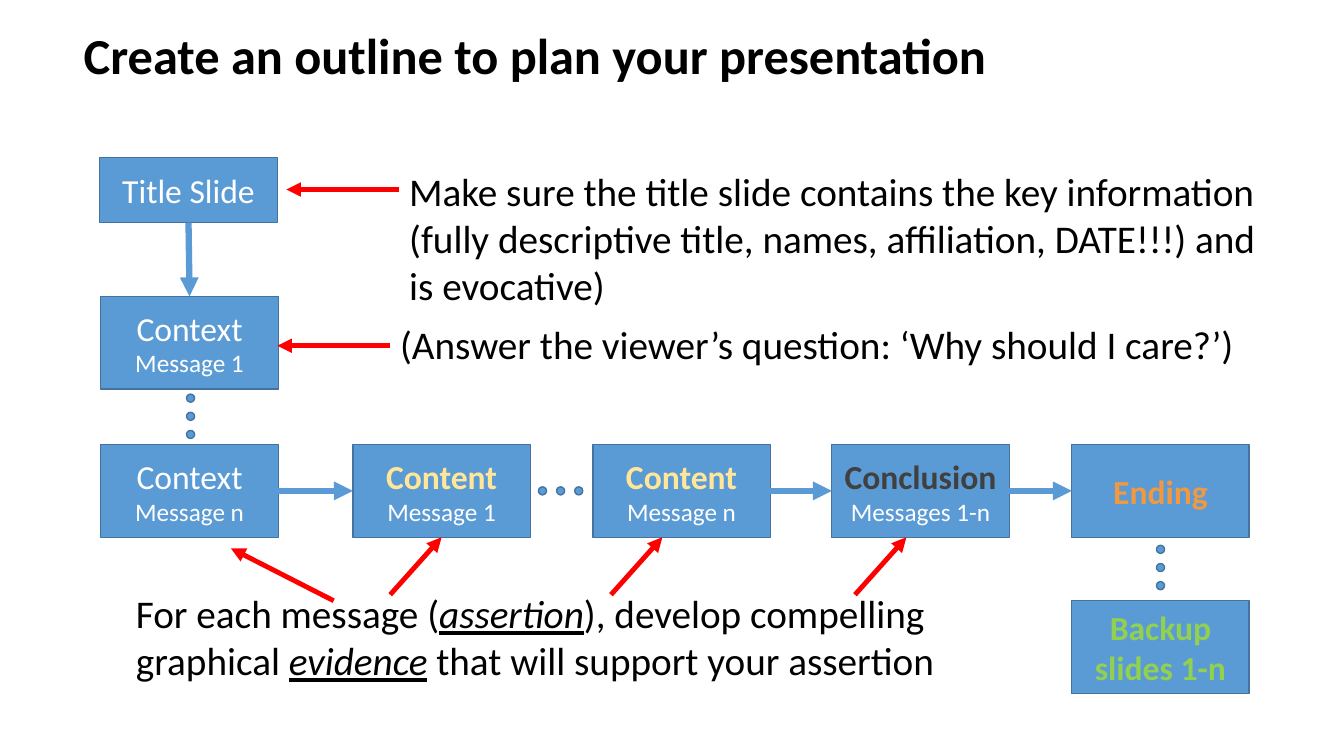
from lxml.etree import SubElement as Sub
from pptx import Presentation
from pptx.dml.color import RGBColor
from pptx.enum.shapes import MSO_CONNECTOR as Link, MSO_SHAPE as Kind
from pptx.enum.text import MSO_ANCHOR as Anchor, PP_ALIGN as Align
from pptx.oxml.ns import qn
from pptx.util import Inches, Pt


def color(code):
    return RGBColor.from_string(code)


class Deck:
    """Draws styled elements on the current slide."""

    font, ink, white = "Calibri", "000000", "FFFFFF"
    blue, edge, red = "5B9BD5", "43739E", "FF0000"
    wide, tall, dot, step = 1.76, 0.92, 0.08, 0.18

    def __init__(self):
        self.show = Presentation()
        self.show.slide_width, self.show.slide_height = Inches(13.33), Inches(7.5)
        self.slide = self.show.slides.add_slide(self.show.slide_layouts[5])

    def style(self, run, size, code, bold=False):
        font = run.font
        font.name, font.size, font.bold = self.font, Pt(size), bold
        font.color.rgb = color(code)

    def title(self, text, *area):
        shape = self.slide.shapes.title
        shape.left, shape.top, shape.width, shape.height = map(Inches, area)
        frame = shape.text_frame
        frame.text, frame.vertical_anchor = text, Anchor.TOP
        para = frame.paragraphs[0]
        para.alignment, para.line_spacing = Align.LEFT, 0.9
        self.style(para.runs[0], 36, self.ink, True)

    def note(self, parts, *area):
        frame = self.slide.shapes.add_textbox(*map(Inches, area)).text_frame
        frame.word_wrap = True
        for i, part in enumerate(parts):
            run = frame.paragraphs[0].add_run()
            run.text = part
            self.style(run, 28, self.ink)
            if i % 2:
                run.font.italic = run.font.underline = True

    def paint(self, shape):
        shape.shadow.inherit = False
        shape.fill.solid()
        shape.fill.fore_color.rgb = color(self.blue)
        shape.line.color.rgb = color(self.edge)
        shape.line.width = Pt(1)

    def box(self, left, top, head, sub="", code=white, tall=tall):
        area = map(Inches, (left, top, self.wide, tall))
        shape = self.slide.shapes.add_shape(Kind.FLOWCHART_PROCESS, *area)
        self.paint(shape)
        frame = shape.text_frame
        frame.word_wrap, frame.vertical_anchor = True, Anchor.MIDDLE
        para = frame.paragraphs[0]
        para.text = head + " " if sub else head
        para.alignment = Align.CENTER
        self.style(para.runs[0], 24, code, code != self.white)
        if sub:
            run = para.add_run()
            run.text = sub
            self.style(run, 18, self.white)
        return shape

    def dots(self, left, top, dx=0, dy=0):
        group = self.slide.shapes.add_group_shape()
        for i in range(3):
            area = (left + i * dx, top + i * dy, self.dot, self.dot)
            self.paint(group.shapes.add_shape(Kind.OVAL, *map(Inches, area)))

    def arrow(self, start, end, code=red, width=3.5):
        line = self.slide.shapes.add_connector(
            Link.STRAIGHT, *map(Inches, start + end))
        line.line.color.rgb = color(code)
        line.line.width = Pt(width)
        Sub(line.line._get_or_add_ln(), qn("a:tailEnd"), type="triangle")
        Sub(line._element.spPr, qn("a:effectLst"))
        return line

    def join(self, first, out, last, into):
        line = self.arrow((0, 0), (0, 0), self.blue, 4.5)
        line.begin_connect(first, out)
        line.end_connect(last, into)


def main():
    deck = Deck()
    deck.title("Create an outline to plan your presentation",
               0.73, 0.26, 11.79, 1.45)

    row, gold = 4.41, "FFE699"
    cover = deck.box(0.99, 1.56, "Title Slide", tall=0.65)
    first = deck.box(1, 2.94, "Context", "Message 1")
    chain = [deck.box(left, row, *text) for left, *text in (
        (1, "Context", "Message n"),
        (3.5, "Content", "Message 1", gold),
        (5.88, "Content", "Message n", gold),
        (8.25, "Conclusion", "Messages 1-n", "404040"),
        (10.63, "Ending", "", "F19941"))]
    deck.box(10.63, 5.96, "Backup slides 1-n", code="92D050")

    deck.join(cover, 2, first, 0)
    for i in (0, 2, 3):
        deck.join(chain[i], 3, chain[i + 1], 1)
    deck.dots(1.85, 3.91, dy=deck.step)
    deck.dots(5.34, 4.83, dx=deck.step)
    deck.dots(11.47, 5.41, dy=deck.step)

    deck.note(["Make sure the title slide contains the key information "
               "(fully descriptive title, names, affiliation, DATE!!!) "
               "and is evocative)"], 3.96, 1.61, 8.9, 1.51)
    deck.note(["(Answer the viewer’s question: ‘Why should I care?’)"],
              3.87, 3.13, 8.9, 0.57)
    deck.note(["For each message (", "assertion",
               "), develop compelling graphical ", "evidence",
               " that will support your assertion"], 1.25, 5.8, 8.46, 1.04)

    deck.arrow((3.96, 1.88), (2.84, 1.88))
    deck.arrow((3.87, 3.43), (2.75, 3.43))
    deck.arrow((3.31, 5.96), (2.29, 5.44))
    rise = [deck.arrow((x, 5.9), (x + 0.51, 5.33)) for x in (3.87, 6.06, 8.48)]
    rise[0].end_connect(chain[1], 2)

    deck.show.save("out.pptx")


if __name__ == "__main__":
    main()
